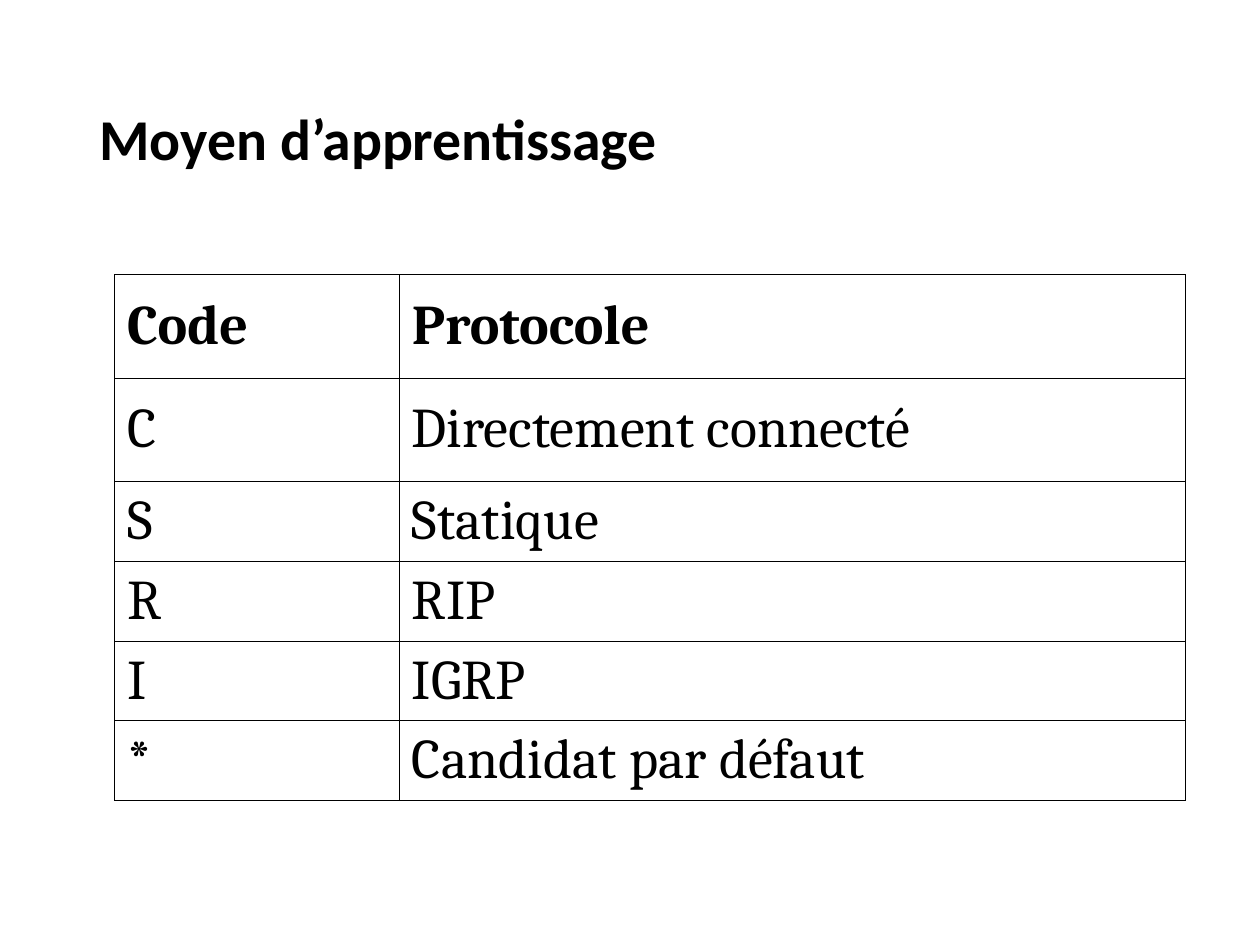
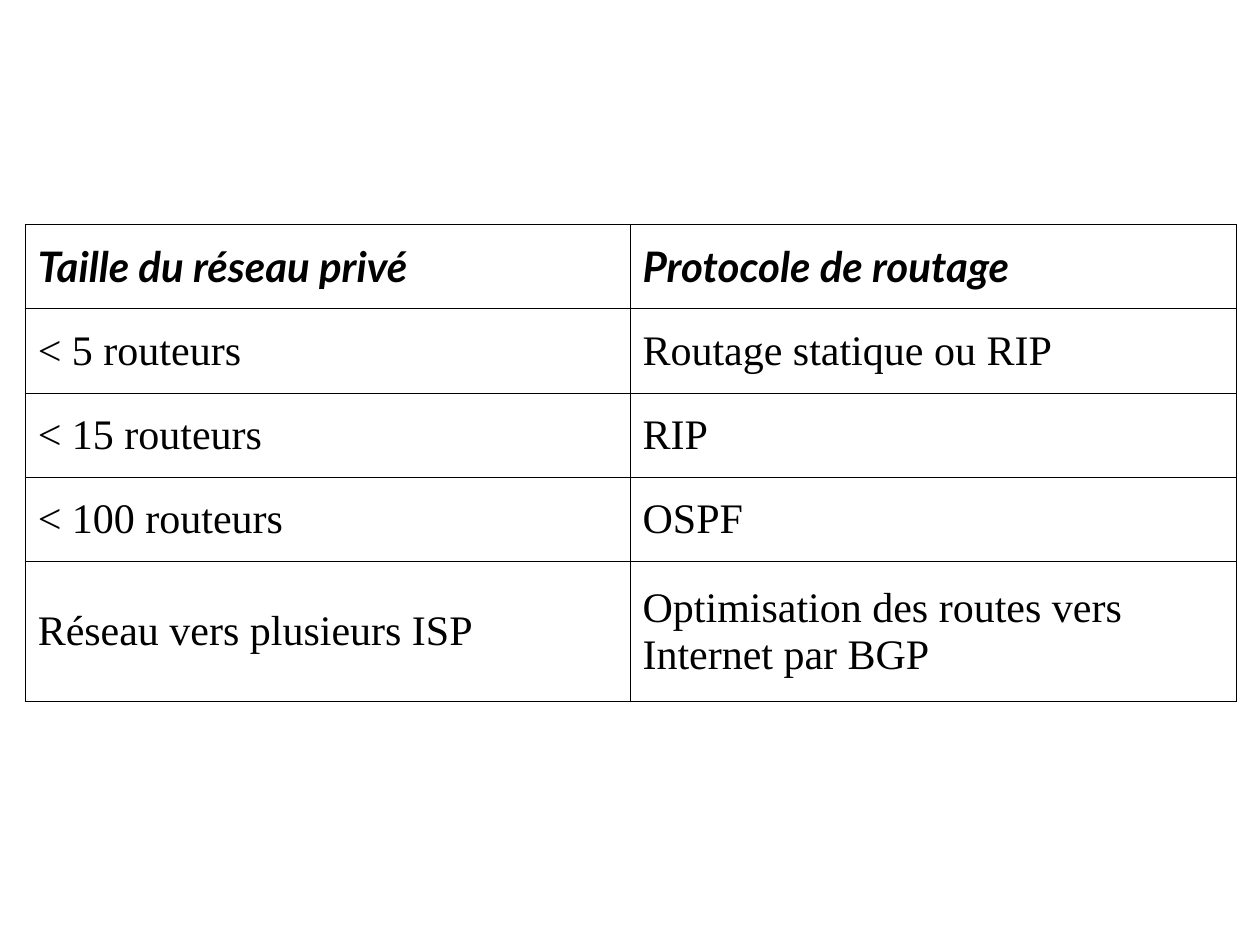
from dataclasses import dataclass

from lxml.etree import SubElement
from pptx import Presentation
from pptx.dml.color import RGBColor
from pptx.enum.text import MSO_ANCHOR as Anchor
from pptx.oxml.ns import qn
from pptx.util import Inches, Pt

TITLE = "Moyen d’apprentissage"
ROUTE_CODES = [
    ("Code", "Protocole"),
    ("C", "Directement connecté"),
    ("S", "Statique"),
    ("R", "RIP"),
    ("I", "IGRP"),
    ("*", "Candidat par défaut"),
]
NETWORK_SIZES = [
    ("Taille du réseau privé", "Protocole de routage"),
    ("< 5 routeurs", "Routage statique ou RIP"),
    ("< 15 routeurs", "RIP"),
    ("< 100 routeurs", "OSPF"),
    ("Réseau vers plusieurs ISP", "Optimisation des routes vers Internet par BGP"),
]

WIDTH, HEIGHT = Inches(10), Inches(7.5)
GRID_COLUMNS, GRID_ROWS = 100, 75
TITLE_AREA = (6.9, 4, 86.2, 14.5)
CODES_GRID = dict(left=9.1, top=21.8, columns=(22.6, 62.4), rows=[8.2] * 2 + [6.1] * 4)
SIZES_GRID = dict(left=2, top=17.8, columns=(48, 48.1), rows=[6.7] * 4 + [11.1])


@dataclass(frozen=True)
class Theme:
    ink: str = "000000"
    paper: str = "FFFFFF"
    rule: float = 0.5
    title: tuple = ("Calibri", 33)
    codes: tuple = ("Cambria", 32)
    sizes_head: tuple = ("Lato", 24)
    sizes_body: tuple = ("Times New Roman", 24)


THEME = Theme()


def across(columns):
    return round(WIDTH * columns / GRID_COLUMNS)


def down(rows):
    return round(HEIGHT * rows / GRID_ROWS)


def write(frame, text, style, bold=False, italic=False, spacing=None):
    frame.word_wrap = True
    paragraph = frame.paragraphs[0]
    paragraph.line_spacing = spacing
    run = paragraph.add_run()
    run.text = text
    font = run.font
    font.name, size = style
    font.size = Pt(size)
    font.bold, font.italic = bold, italic
    font.color.rgb = RGBColor.from_string(THEME.ink)


def outline(cell):
    properties = cell._tc.get_or_add_tcPr()
    for position, side in enumerate(("lnL", "lnR", "lnT", "lnB")):
        edge = SubElement(properties, qn(f"a:{side}"), w=str(Pt(THEME.rule)))
        ink = SubElement(edge, qn("a:solidFill"))
        SubElement(ink, qn("a:srgbClr"), val=THEME.ink)
        properties.insert(position, edge)


def add_grid(slide, content, left, top, columns, rows, head, body, italic_head=False):
    table = slide.shapes.add_table(
        len(rows), len(columns), across(left), down(top),
        across(sum(columns)), down(sum(rows)),
    ).table
    table.first_row = table.horz_banding = False
    for column, width in zip(table.columns, columns):
        column.width = across(width)
    for number, (row, height, entries) in enumerate(zip(table.rows, rows, content)):
        row.height = down(height)
        is_head = number == 0
        for cell, entry in zip(row.cells, entries):
            cell.vertical_anchor = Anchor.MIDDLE
            cell.fill.background()
            outline(cell)
            write(cell.text_frame, entry, head if is_head else body,
                  bold=is_head, italic=is_head and italic_head)


def add_title(slide, text):
    left, top, width, height = TITLE_AREA
    frame = slide.shapes.add_textbox(
        across(left), down(top), across(width), down(height)
    ).text_frame
    frame.vertical_anchor = Anchor.MIDDLE
    write(frame, text, THEME.title, bold=True, spacing=0.9)


def add_slide(deck):
    slide = deck.slides.add_slide(deck.slide_layouts[6])
    slide.background.fill.solid()
    slide.background.fill.fore_color.rgb = RGBColor.from_string(THEME.paper)
    return slide


def main():
    deck = Presentation()
    deck.slide_width, deck.slide_height = WIDTH, HEIGHT

    codes = add_slide(deck)
    add_title(codes, TITLE)
    add_grid(codes, ROUTE_CODES, **CODES_GRID, head=THEME.codes, body=THEME.codes)

    sizes = add_slide(deck)
    add_grid(sizes, NETWORK_SIZES, **SIZES_GRID, head=THEME.sizes_head,
             body=THEME.sizes_body, italic_head=True)

    deck.save("out.pptx")


if __name__ == "__main__":
    main()
